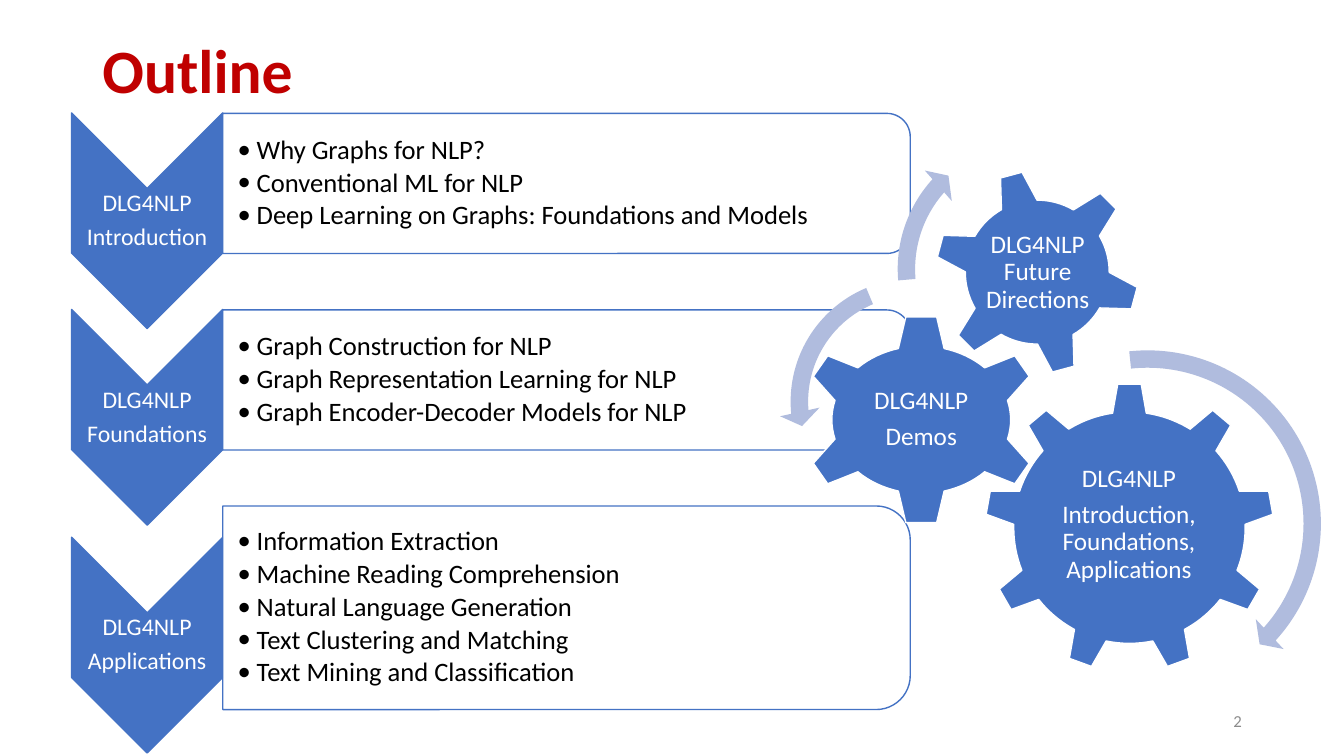
from dataclasses import dataclass

from lxml import etree
from pptx import Presentation
from pptx.dml.color import RGBColor
from pptx.enum.shapes import MSO_SHAPE
from pptx.enum.text import MSO_ANCHOR, PP_ALIGN
from pptx.oxml.ns import qn
from pptx.util import Inches, Pt

CHEVRON = MSO_SHAPE.CHEVRON
PANEL = MSO_SHAPE.ROUND_2_SAME_RECTANGLE
GEAR_6 = MSO_SHAPE.GEAR_6
GEAR_9 = MSO_SHAPE.GEAR_9
ARROW = MSO_SHAPE.CIRCULAR_ARROW
LEFT_ARROW = MSO_SHAPE.LEFT_CIRCULAR_ARROW
MIDDLE = MSO_ANCHOR.MIDDLE
LEFT, CENTER, RIGHT = PP_ALIGN.LEFT, PP_ALIGN.CENTER, PP_ALIGN.RIGHT

FONT = "Calibri"
RED, BLUE, LAVENDER = "C00000", "4472C4", "B0BCDE"
WHITE, BLACK, GRAY = "FFFFFF", "000000", "8C8C8C"
SLIDE_W, SLIDE_H = Inches(13.333), Inches(7.5)


@dataclass
class Box:
    cx: float
    cy: float
    w: float
    h: float


@dataclass
class Section:
    name: str
    cy: float
    h: float
    topics: list[str]


@dataclass
class Gear:
    kind: int
    box: Box
    label: Box
    lines: list[str]
    rotation: float = 0


@dataclass
class Turn:
    kind: int
    box: Box
    adjustments: list[float]


SECTIONS = [
    Section("Introduction", 24.27, 18.53, [
        "Why Graphs for NLP?",
        "Conventional ML for NLP",
        "Deep Learning on Graphs: Foundations and Models"]),
    Section("Foundations", 50.27, 18.53, [
        "Graph Construction for NLP",
        "Graph Representation Learning for NLP",
        "Graph Encoder-Decoder Models for NLP"]),
    Section("Applications", 80.4, 26.93, [
        "Information Extraction",
        "Machine Reading Comprehension",
        "Natural Language Generation",
        "Text Clustering and Matching",
        "Text Mining and Classification"]),
]
GEARS = [
    Gear(GEAR_9, Box(84.04, 69.8, 21.53, 38.27), Box(84, 69.4, 12.9, 19.6),
         ["DLG4NLP", "Introduction, Foundations, Applications"]),
    Gear(GEAR_6, Box(68.55, 55.53, 18, 27.87), Box(68.55, 55.53, 9.45, 13.73),
         ["DLG4NLP", "Demos"]),
    Gear(GEAR_6, Box(77.18, 36, 15.3, 27.2), Box(77.21, 36.07, 8.63, 15.33),
         ["DLG4NLP Future Directions"], 345),
]
TURNS = [
    Turn(ARROW, Box(85.39, 69.27, 27.53, 48.93), [0.047, 2.99, 25.284, 158.352, 0.055]),
    Turn(LEFT_ARROW, Box(67.99, 53.13, 20.03, 35.6), [0.065, 4.3, 104.891, 148.378, 0.075]),
    Turn(ARROW, Box(76.73, 35.6, 21.6, 38.4), [0.06, 3.941, 133.138, 105.082, 0.07]),
]


def color(value: str) -> RGBColor:
    return RGBColor.from_string(value)


def x(percent: float) -> int:
    return round(SLIDE_W * percent / 100)


def y(percent: float) -> int:
    return round(SLIDE_H * percent / 100)


def frame(box: Box, quarter_turn: bool = False) -> tuple[int, int, int, int]:
    w, h = x(box.w), y(box.h)
    if quarter_turn:
        w, h = h, w
    return x(box.cx) - w // 2, y(box.cy) - h // 2, w, h


def add_shape(s, kind, box: Box, fill: str, line: str | None = None,
              rotation: float = 0, opacity: int = 100):
    sp = s.shapes.add_shape(kind, *frame(box, rotation == 90))
    sp.shadow.inherit = False
    sp.rotation = rotation
    sp.fill.solid()
    sp.fill.fore_color.rgb = color(fill)
    if opacity < 100:
        rgb = sp._element.spPr.find(f".//{qn('a:srgbClr')}")
        etree.SubElement(rgb, qn("a:alpha"), val=str(opacity * 1000))
    if line:
        sp.line.color.rgb = color(line)
        sp.line.width = Pt(1)
    else:
        sp.line.fill.background()
    return sp


def write(sp, lines: list[str], *, size: float, fill: str = WHITE, bold: bool = False,
          align=CENTER, spacing: float = 0.9, after: float = 0,
          inset: int | None = None, left: int | None = None, bullet: bool = False) -> None:
    tf = sp.text_frame
    tf.word_wrap = True
    tf.vertical_anchor = MIDDLE
    if inset is not None:
        tf.margin_left = tf.margin_right = tf.margin_top = tf.margin_bottom = inset
    if left is not None:
        tf.margin_left = left
    for i, line in enumerate(lines):
        p = tf.add_paragraph() if i else tf.paragraphs[0]
        if bullet:
            indent = x(1.43)
            pPr = p._p.get_or_add_pPr()
            pPr.set("marL", str(indent))
            pPr.set("indent", str(-indent))
            etree.SubElement(pPr, qn("a:buFont"), typeface=FONT)
            etree.SubElement(pPr, qn("a:buChar"), char="•")
        p.alignment = align
        p.line_spacing = spacing
        p.space_after = Pt(size * after)
        r = p.add_run()
        r.text = line
        r.font.name = FONT
        r.font.size = Pt(size)
        r.font.bold = bold
        r.font.color.rgb = color(fill)


def add_text(s, box: Box, lines: list[str], **style) -> None:
    write(s.shapes.add_textbox(*frame(box)), lines, **style)


def add_section(s, section: Section) -> None:
    cy = section.cy
    chevron_cy = cy + 4.93
    add_shape(s, CHEVRON, Box(10.95, chevron_cy, 11.25, 28.53), BLUE, BLUE, 90)
    add_text(s, Box(10.95, chevron_cy, 11.25, 8.53), ["DLG4NLP", section.name],
             size=17, after=0.35, inset=Pt(1))
    add_shape(s, PANEL, Box(42.15, cy, 51.15, section.h), WHITE, BLUE, 90, 90)
    add_text(s, Box(41.89, cy, 50.63, section.h * 0.9), section.topics,
             size=19, fill=BLACK, align=LEFT, after=0.15,
             inset=Pt(1), left=x(1.1), bullet=True)


def add_gear(s, gear: Gear) -> None:
    add_shape(s, gear.kind, gear.box, BLUE, WHITE, gear.rotation)
    add_text(s, gear.label, gear.lines, size=18, after=0.35, inset=Pt(2))


def add_turn(s, turn: Turn) -> None:
    sp = add_shape(s, turn.kind, turn.box, LAVENDER)
    for i, value in enumerate(turn.adjustments):
        sp.adjustments[i] = value


def main() -> None:
    prs = Presentation()
    prs.slide_width, prs.slide_height = SLIDE_W, SLIDE_H
    s = prs.slides.add_slide(prs.slide_layouts[5])
    title = s.shapes.title
    title.left, title.top, title.width, title.height = frame(Box(50, 9.67, 86.25, 19.33))
    write(title, ["Outline"], size=44, fill=RED, bold=True, align=LEFT)
    add_text(s, Box(81.9, 95.33, 22.5, 5.33), ["2"],
             size=12, fill=GRAY, align=RIGHT, spacing=1)
    for section in SECTIONS:
        add_section(s, section)
    for gear in GEARS:
        add_gear(s, gear)
    for turn in TURNS:
        add_turn(s, turn)
    prs.save("out.pptx")


if __name__ == "__main__":
    main()
